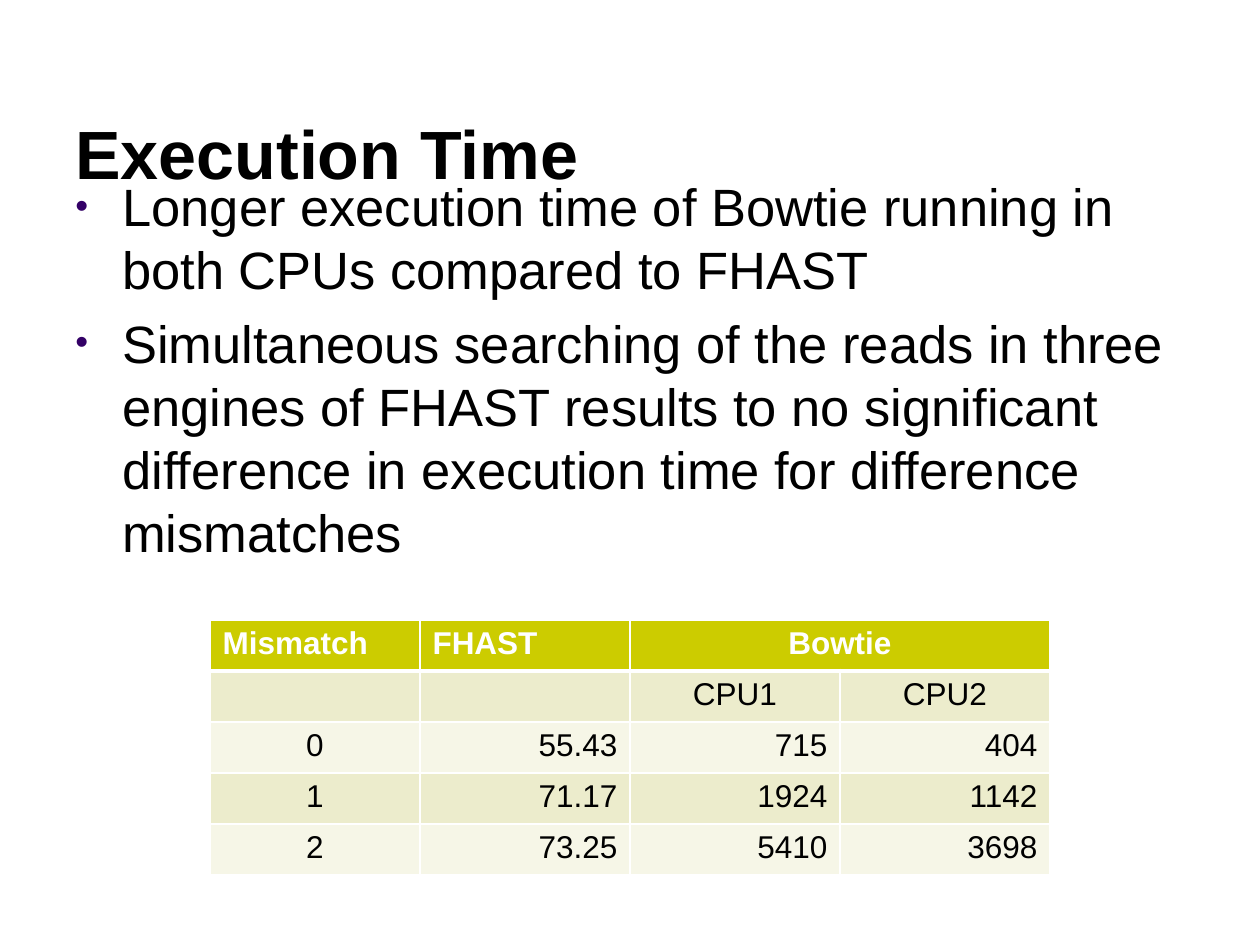
from collections import namedtuple
from dataclasses import dataclass

from lxml import etree
from pptx import Presentation
from pptx.dml.color import RGBColor
from pptx.enum import text
from pptx.oxml import ns
from pptx.util import Emu, Pt

PX = 914400 / 126  # EMU in one px
Box = namedtuple("Box", "left top width height")
LEFT, CENTER, RIGHT = text.PP_ALIGN.LEFT, text.PP_ALIGN.CENTER, text.PP_ALIGN.RIGHT


@dataclass(frozen=True)
class Theme:
    font: str = "Arial"
    ink: str = "000000"
    white: str = "FFFFFF"
    bullet: str = "330066"
    header: str = "CCCC00"
    bands: tuple = ("ECECCC", "F6F6E7")
    title_size: int = 39
    body_size: int = 30
    body_line: int = 36
    body_gap: int = 6
    table_size: int = 18


THEME = Theme()

TITLE = "Execution Time"
POINTS = [
    "Longer execution time of Bowtie running in both CPUs compared to FHAST",
    "Simultaneous searching of the reads in three engines of FHAST results to no "
    "significant difference in execution time for difference mismatches",
]
HEADER = ["Mismatch", "FHAST", "Bowtie", ""]
ROWS = [
    ["", "", "CPU1", "CPU2"],
    ["0", "55.43", "715", "404"],
    ["1", "71.17", "1924", "1142"],
    ["2", "73.25", "5410", "3698"],
]


def px(length):
    return Emu(round(length * PX))


def add_element(parent, tag, **attributes):
    element = etree.SubElement(parent, ns.qn(tag))
    for name, value in attributes.items():
        element.set(name, str(value))
    return element


def write(paragraph, words, size, color=THEME.ink, bold=False, align=LEFT):
    paragraph.alignment = align
    paragraph.font.size = Pt(size)
    if words:
        run = paragraph.add_run()
        run.text = words
        run.font.name = THEME.font
        run.font.size = Pt(size)
        run.font.bold = bold
        run.font.color.rgb = RGBColor.from_string(color)


def add_text_frame(slide, box, anchor):
    frame = slide.shapes.add_textbox(*map(px, box)).text_frame
    frame.word_wrap = True
    frame.vertical_anchor = anchor
    return frame


def add_bullet(paragraph, indent):
    properties = paragraph._p.get_or_add_pPr()
    properties.set("marL", str(px(indent)))
    properties.set("indent", str(-px(indent)))
    color = add_element(properties, "a:buClr")
    add_element(color, "a:srgbClr", val=THEME.bullet)
    add_element(properties, "a:buSzPct", val=70000)
    add_element(properties, "a:buFont", typeface=THEME.font)
    add_element(properties, "a:buChar", char="•")


def set_borders(cell, bottom=1, top=1):
    properties = cell._tc.get_or_add_tcPr()
    widths = {"a:lnL": 1, "a:lnR": 1, "a:lnT": top, "a:lnB": bottom}
    for tag, width in widths.items():
        line = add_element(properties, tag, w=Pt(width))
        add_element(add_element(line, "a:solidFill"), "a:srgbClr", val=THEME.white)


def add_title(slide, box):
    frame = add_text_frame(slide, box, text.MSO_ANCHOR.BOTTOM)
    write(frame.paragraphs[0], TITLE, THEME.title_size, bold=True)


def add_points(slide, box):
    frame = add_text_frame(slide, box, text.MSO_ANCHOR.TOP)
    for index, point in enumerate(POINTS):
        paragraph = frame.add_paragraph() if index else frame.paragraphs[0]
        paragraph.line_spacing = Pt(THEME.body_line)
        paragraph.space_before = Pt(THEME.body_gap if index else 0)
        add_bullet(paragraph, indent=47)
        write(paragraph, point, THEME.body_size)


def add_times_table(slide, box):
    rows = [HEADER] + ROWS
    table = slide.shapes.add_table(len(rows), len(HEADER), *map(px, box)).table
    for column in table.columns:
        column.width = px(box.width / len(HEADER))
    for row in table.rows:
        row.height = px(box.height / len(rows))

    for row_index, values in enumerate(rows):
        is_header = row_index == 0
        fill = THEME.header if is_header else THEME.bands[(row_index - 1) % 2]
        for column_index, value in enumerate(values):
            cell = table.cell(row_index, column_index)
            # Borders come before the fill in the cell properties
            set_borders(cell, bottom=3 if is_header else 1, top=3 if row_index == 1 else 1)
            cell.fill.solid()
            cell.fill.fore_color.rgb = RGBColor.from_string(fill)
            if is_header:
                align = CENTER if value == "Bowtie" else LEFT
            else:
                align = CENTER if row_index == 1 or column_index == 0 else RIGHT
            write(cell.text_frame.paragraphs[0], value, THEME.table_size,
                  color=THEME.white if is_header else THEME.ink,
                  bold=is_header, align=align)

    # "Bowtie" heads both CPU columns
    table.cell(0, 2).merge(table.cell(0, 3))


def main():
    presentation = Presentation()
    presentation.slide_width, presentation.slide_height = px(1260), px(945)
    slide = presentation.slides.add_slide(presentation.slide_layouts[6])
    add_title(slide, Box(63, 94, 1134, 105))
    add_points(slide, Box(63, 168, 1134, 624))
    add_times_table(slide, Box(210, 620, 840, 255))
    presentation.save("out.pptx")


if __name__ == "__main__":
    main()
